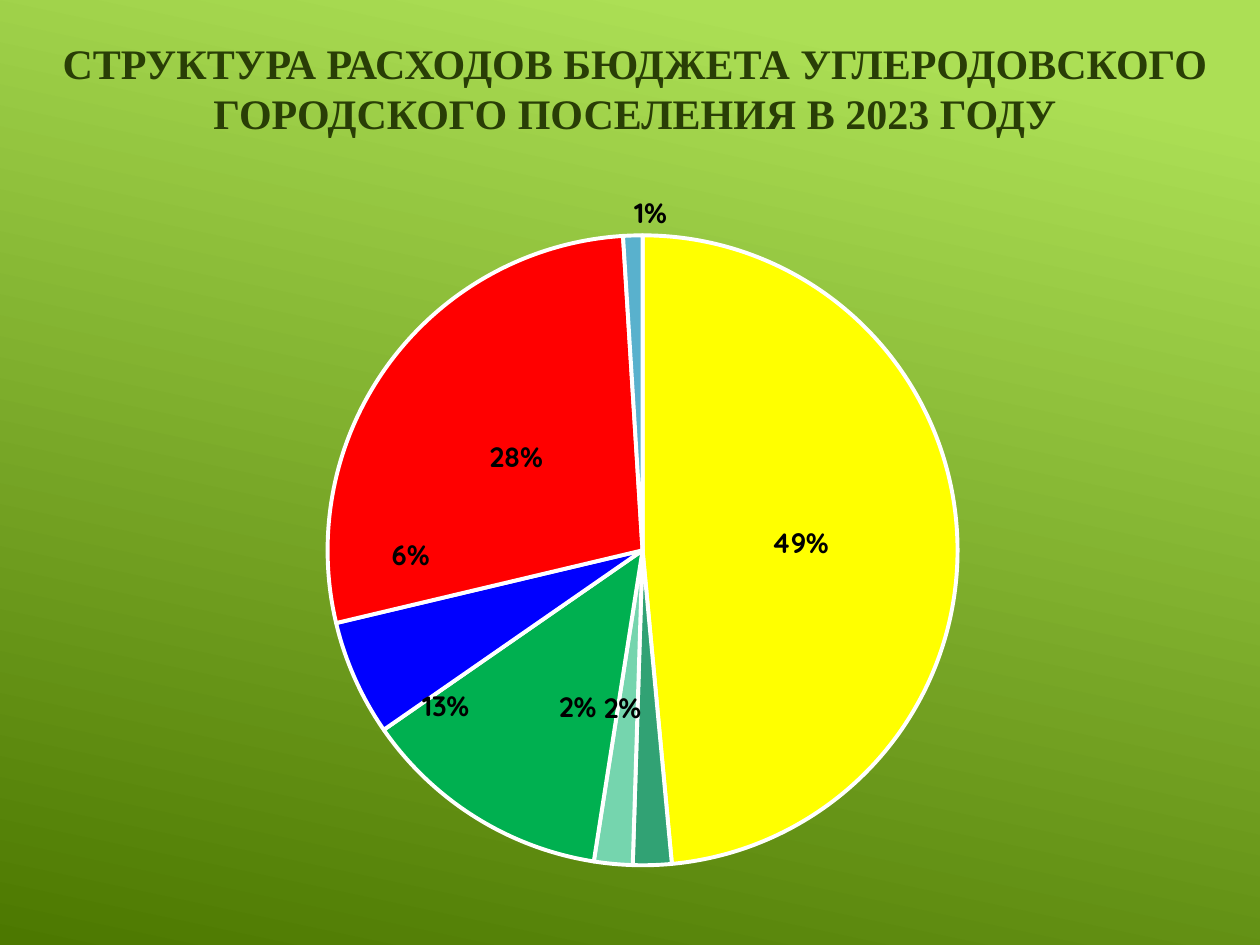
from pptx import Presentation
from pptx.chart.data import CategoryChartData
from pptx.dml.color import RGBColor
from pptx.enum.chart import XL_CHART_TYPE, XL_LABEL_POSITION
from pptx.enum.text import MSO_ANCHOR, PP_ALIGN
from pptx.oxml import parse_xml
from pptx.oxml.ns import nsdecls
from pptx.util import Pt

COLORS = {
    "bg_light": "ACDF55", "bg_dark": "4C7800", "title": "293E06",
    "label": "000000", "edge": "FFFFFF",
}
SHARES = [
    (49, "FFFF00", (0, 0)),
    (2, "31A274", (-0.02, 0)),
    (2, "75D5AE", (-0.04, 0)),
    (13, "00B050", (-0.09, 0.03)),
    (6, "0000FF", (-0.07, -0.08)),
    (28, "FF0000", (0, 0)),
    (1, "59B1CD", (0.01, -0.24)),
]
TITLE_FONT = {"name": "Times New Roman", "size": Pt(24), "bold": True}
CHART_FONT = {"name": "Quicksand", "size": Pt(10)}
LABEL_FONT = {"name": "Quicksand", "size": Pt(16), "bold": True}


def rgb(key):
    return RGBColor.from_string(COLORS.get(key, key))


def format_font(font, values, color):
    for name, value in values.items():
        setattr(font, name, value)
    font.color.rgb = rgb(color)


def manual_layout(x, y, extra=""):
    return (f'<c:layout {nsdecls("c")}><c:manualLayout>{extra}'
            f'<c:x val="{x}"/><c:y val="{y}"/>')


def add_background(s):
    fill = s.background.fill
    fill.gradient()
    fill.gradient_angle = 258
    stops = zip(fill.gradient_stops, (0.1, 1), ("bg_light", "bg_dark"))
    for stop, position, color in stops:
        stop.position = position
        stop.color.rgb = rgb(color)


def add_title(s, text, left, top, width, height):
    sp = s.shapes.title
    sp.left, sp.top, sp.width, sp.height = left, top, width, height
    tf = sp.text_frame
    tf.word_wrap = True
    tf.vertical_anchor = MSO_ANCHOR.MIDDLE
    p = tf.paragraphs[0]
    p.alignment = PP_ALIGN.CENTER
    r = p.add_run()
    r.text = text
    format_font(r.font, TITLE_FONT, "title")


def place_label(labels, index, x, y):
    flags = "".join(
        f'<c:show{name} val="{int(name == "Percent")}"/>'
        for name in ("LegendKey", "Val", "CatName", "SerName", "Percent", "BubbleSize"))
    label = parse_xml(
        f'<c:dLbl {nsdecls("c")}><c:idx val="{index}"/>'
        f'{manual_layout(x, y)}</c:manualLayout></c:layout>'
        f'<c:dLblPos val="ctr"/>{flags}</c:dLbl>')
    labels.insert(index, label)


def add_pie(s, left, top, width, height):
    data = CategoryChartData()
    data.categories = [str(i + 1) for i in range(len(SHARES))]
    data.add_series("Series 1", [share for share, _, _ in SHARES])
    chart = s.shapes.add_chart(XL_CHART_TYPE.PIE, left, top, width, height, data).chart
    chart.has_title = False
    chart.has_legend = False
    format_font(chart.font, CHART_FONT, "edge")

    plot = chart.plots[0]
    plot.vary_by_categories = True
    series = plot.series[0]
    labels = series.data_labels
    labels.show_percentage = True
    labels.show_value = False
    labels.number_format = "0%"
    labels.number_format_is_linked = False
    labels.position = XL_LABEL_POSITION.CENTER
    format_font(labels.font, LABEL_FONT, "label")

    label_list = series._element.find(".//c:dLbls", series._element.nsmap)
    for i, (_, color, offset) in enumerate(SHARES):
        slice_format = series.points[i].format
        slice_format.fill.solid()
        slice_format.fill.fore_color.rgb = rgb(color)
        slice_format.line.color.rgb = rgb("edge")
        slice_format.line.width = Pt(2.25)
        place_label(label_list, i, *offset)

    plot_area = plot._element.getparent()
    for old in plot_area.findall("c:layout", plot_area.nsmap):
        plot_area.remove(old)
    modes = ('<c:layoutTarget val="inner"/><c:xMode val="edge"/>'
             '<c:yMode val="edge"/>')
    plot_area.insert(0, parse_xml(
        manual_layout(0.26, 0.08, modes)
        + '<c:w val="0.5"/><c:h val="0.84"/></c:manualLayout></c:layout>'))


def main():
    prs = Presentation()
    prs.slide_width, prs.slide_height = Pt(720), Pt(540)
    s = prs.slides.add_slide(prs.slide_layouts[5])
    add_background(s)
    add_title(s, "СТРУКТУРА РАСХОДОВ БЮДЖЕТА УГЛЕРОДОВСКОГО "
              "ГОРОДСКОГО ПОСЕЛЕНИЯ В 2023 ГОДУ", Pt(28), Pt(11.5), Pt(669.6), Pt(77))
    add_pie(s, Pt(0), Pt(100), Pt(720), Pt(429))
    prs.save("out.pptx")


if __name__ == "__main__":
    main()
